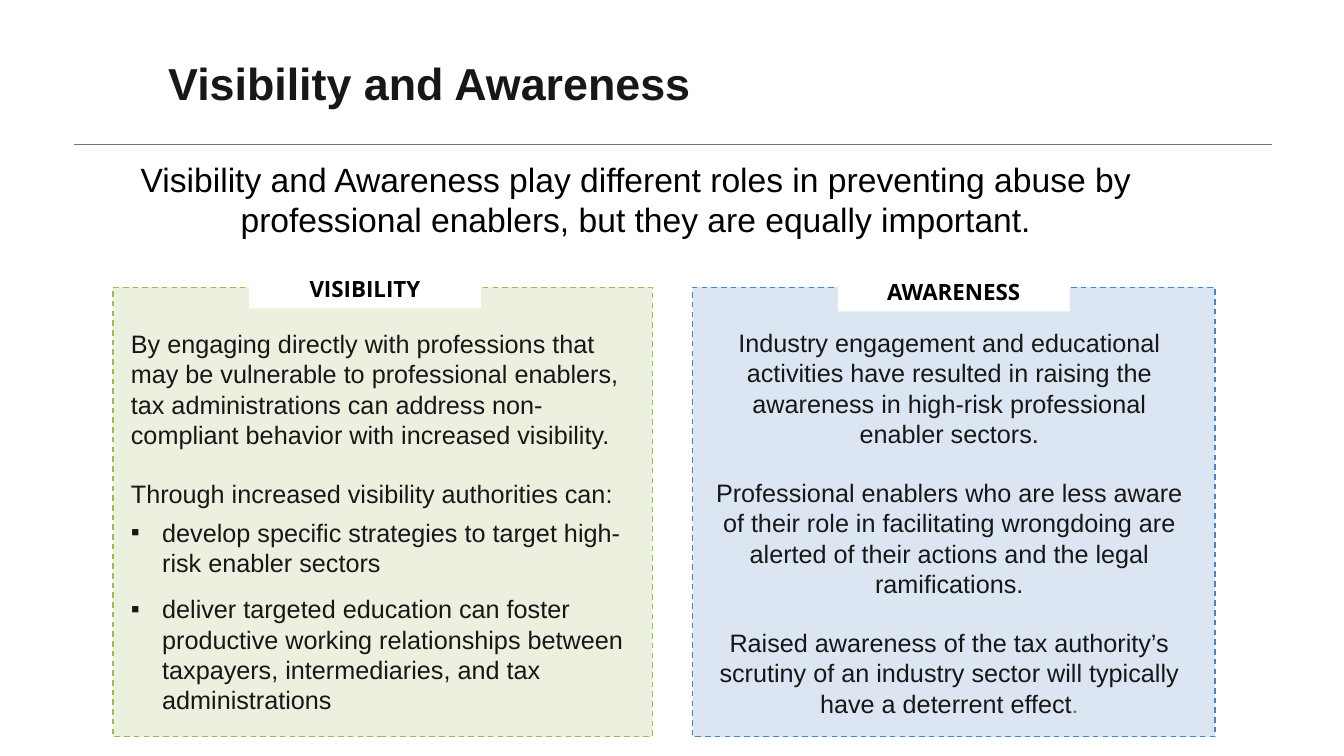
"""Builds the Visibility and Awareness slide."""
from dataclasses import dataclass

from lxml.etree import SubElement
from pptx import Presentation
from pptx.dml.color import RGBColor
from pptx.enum.dml import MSO_LINE_DASH_STYLE as Dash
from pptx.enum.shapes import MSO_CONNECTOR as Connector, MSO_SHAPE as Shape
from pptx.enum.text import MSO_ANCHOR as Anchor, PP_ALIGN as Align
from pptx.oxml.ns import qn
from pptx.util import Inches, Pt


@dataclass(frozen=True)
class Theme:
    """Colours, fonts and type sizes."""
    ink: str = "171717"
    black: str = "000000"
    white: str = "FFFFFF"
    grey: str = "727272"
    green: str = "9BBB59"
    pale_green: str = "EBF1DE"
    blue: str = "4F81BD"
    pale_blue: str = "DCE6F2"
    font: str = "Arial"
    label_font: str = "Open Sans"
    stop_font: str = "Roboto"
    title: float = 32
    lead: float = 24
    body: float = 18
    label: float = 16


@dataclass(frozen=True)
class Box:
    """Left, top, width and height in inches."""
    left: float
    top: float
    width: float
    height: float

    def lengths(self) -> list:
        """Return the four lengths for a shape call."""
        return [Inches(v) for v in (self.left, self.top, self.width, self.height)]


@dataclass(frozen=True)
class Para:
    """One paragraph of panel text."""
    text: str
    before: float = 0
    after: float = 0
    bullet: bool = False
    stop: str = ""


@dataclass(frozen=True)
class Panel:
    """A dashed panel with a label on its top edge."""
    label: str
    frame: Box
    label_box: Box
    text_box: Box
    fill: str
    line: str
    align: Align
    paras: tuple


T = Theme()
BLANK_LINE = 20.7

PANELS = (
    Panel("VISIBILITY", Box(1.12, 2.85, 5.35, 4.46), Box(2.47, 2.68, 2.3, 0.38),
          Box(1.2, 3.21, 5.11, 3.99), T.pale_green, T.green, Align.LEFT, (
              Para("By engaging directly with professions that may be vulnerable to "
                   "professional enablers, tax administrations can address "
                   "non-compliant behavior with increased visibility."),
              Para("Through increased visibility authorities can:",
                   before=BLANK_LINE, after=6),
              Para("develop specific strategies to target high-risk enabler sectors",
                   bullet=True),
              Para("deliver targeted education can foster productive working "
                   "relationships between taxpayers, intermediaries, and tax "
                   "administrations", before=11.5, bullet=True))),
    Panel("AWARENESS", Box(6.87, 2.85, 5.18, 4.46), Box(8.31, 2.71, 2.3, 0.38),
          Box(6.92, 3.2, 4.99, 4.04), T.pale_blue, T.blue, Align.CENTER, (
              Para("Industry engagement and educational activities have resulted in "
                   "raising the awareness in high-risk professional enabler sectors."),
              Para("Professional enablers who are less aware of their role in "
                   "facilitating wrongdoing are alerted of their actions and the "
                   "legal ramifications.", before=BLANK_LINE),
              Para("Raised awareness of the tax authority’s scrutiny of an industry "
                   "sector will typically have a deterrent effect",
                   before=BLANK_LINE, stop="."))),
)


def rgb(colour: str) -> RGBColor:
    """Turn a hex string into a colour."""
    return RGBColor.from_string(colour)


def add_run(p, text: str, *, size: float = T.body, font: str = T.font,
            colour: str = T.ink, bold: bool = False, align: Align = Align.LEFT) -> None:
    """Add formatted text to a paragraph."""
    p.alignment = align
    r = p.add_run()
    r.text = text
    r.font.size, r.font.name, r.font.bold = Pt(size), font, bold
    r.font.color.rgb = rgb(colour)


def add_bullet(p) -> None:
    """Give a paragraph a hanging square bullet."""
    pr = p._p.get_or_add_pPr()
    pr.set("marL", str(Inches(0.31)))
    pr.set("indent", str(-Inches(0.31)))
    SubElement(pr, qn("a:buFont"), typeface=T.font)
    SubElement(pr, qn("a:buChar"), char="▪")


def add_rect(s, box: Box, fill: str, line: str = ""):
    """Add a filled rectangle, with a dashed outline if a line colour is given."""
    sp = s.shapes.add_shape(Shape.RECTANGLE, *box.lengths())
    sp.shadow.inherit = False
    sp.fill.solid()
    sp.fill.fore_color.rgb = rgb(fill)
    if line:
        sp.line.color.rgb = rgb(line)
        sp.line.width = Pt(1)
        sp.line.dash_style = Dash.DASH
    else:
        sp.line.fill.background()
    return sp


def set_frame(sp, anchor: Anchor):
    """Wrap and anchor a shape's text and return its text frame."""
    tf = sp.text_frame
    tf.word_wrap = True
    tf.vertical_anchor = anchor
    return tf


def add_rule(s, left: float, top: float, width: float) -> None:
    """Draw the thin line under the title."""
    c = s.shapes.add_connector(Connector.STRAIGHT, Inches(left), Inches(top),
                               Inches(left + width), Inches(top))
    c.line.color.rgb = rgb(T.grey)
    c.line.width = Pt(0.5)
    SubElement(c._element.spPr, qn("a:effectLst"))


def add_panel(s, panel: Panel) -> None:
    """Draw a panel, its label and its text."""
    add_rect(s, panel.frame, panel.fill, panel.line)
    tf = set_frame(add_rect(s, panel.label_box, T.white), Anchor.TOP)
    add_run(tf.paragraphs[0], panel.label, size=T.label, font=T.label_font,
            colour=T.black, bold=True, align=Align.CENTER)
    tf = set_frame(s.shapes.add_textbox(*panel.text_box.lengths()), Anchor.TOP)
    for i, para in enumerate(panel.paras):
        p = tf.add_paragraph() if i else tf.paragraphs[0]
        if para.bullet:
            add_bullet(p)
        if para.before:
            p.space_before = Pt(para.before)
        if para.after:
            p.space_after = Pt(para.after)
        add_run(p, para.text, align=panel.align)
        if para.stop:
            add_run(p, para.stop, font=T.stop_font, colour=T.grey, align=panel.align)


def main() -> None:
    """Build and save the slide."""
    prs = Presentation()
    prs.slide_width, prs.slide_height = Inches(13.33), Inches(7.5)
    s = prs.slides.add_slide(prs.slide_layouts[6])
    add_rule(s, 0.73, 1.43, 11.89)
    title = s.shapes.add_textbox(*Box(1.57, 0.26, 10.81, 1.12).lengths())
    add_run(set_frame(title, Anchor.MIDDLE).paragraphs[0], "Visibility and Awareness",
            size=T.title, bold=True)
    lead = add_rect(s, Box(0.46, 1.56, 11.69, 0.83), T.white)
    add_run(set_frame(lead, Anchor.MIDDLE).paragraphs[0],
            "Visibility and Awareness play different roles in preventing abuse by "
            "professional enablers, but they are equally important.",
            size=T.lead, colour=T.black, align=Align.CENTER)
    for panel in PANELS:
        add_panel(s, panel)
    prs.save("out.pptx")


if __name__ == "__main__":
    main()
